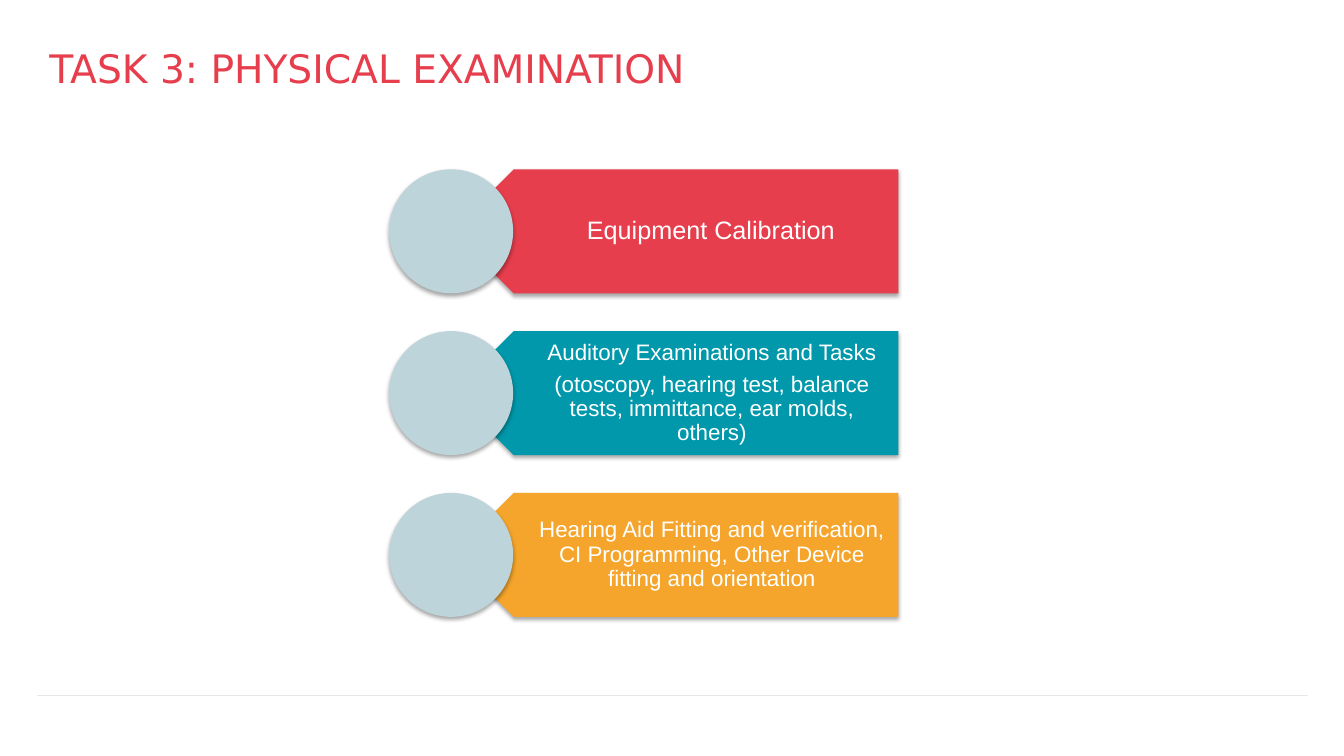
"""Builds the physical examination slide with three labelled banners."""
import pptx
import pptx.util
import pptx.dml.color
import pptx.enum.shapes
import pptx.enum.text
import pptx.oxml

Inches = pptx.util.Inches
Pt = pptx.util.Pt
RGBColor = pptx.dml.color.RGBColor
Shape = pptx.enum.shapes.MSO_SHAPE
Anchor = pptx.enum.text.MSO_ANCHOR
Align = pptx.enum.text.PP_ALIGN

RED = RGBColor(0xE6, 0x3E, 0x4D)
TEAL = RGBColor(0x00, 0x98, 0xAA)
AMBER = RGBColor(0xF5, 0xA5, 0x2B)
PALE = RGBColor(0xBD, 0xD4, 0xDA)
WHITE = RGBColor(0xFF, 0xFF, 0xFF)
DARK = RGBColor(0x26, 0x26, 0x26)

NS = 'xmlns:a="http://schemas.openxmlformats.org/drawingml/2006/main"'
SHADOW = (
    f'<a:outerShdw {NS} blurRad="39370" dist="22860" dir="5400000" rotWithShape="0">'
    '<a:srgbClr val="000000"><a:alpha val="35000"/></a:srgbClr></a:outerShdw>'
)


def add_form(kind, left, top, width, height, color):
    form = slide.shapes.add_shape(kind, Inches(left), Inches(top), Inches(width), Inches(height))
    form.fill.solid()
    form.fill.fore_color.rgb = color
    form.line.fill.background()
    form.shadow.inherit = False
    effects = form._element.spPr.find(pptx.oxml.ns.qn("a:effectLst"))
    effects.append(pptx.oxml.parse_xml(SHADOW))
    return form


def add_run(para, text, font, size, color):
    run = para.add_run()
    run.text = text
    run.font.name = font
    run.font.size = Pt(size)
    run.font.color.rgb = color


deck = pptx.Presentation()
deck.slide_width = Inches(13.33)
deck.slide_height = Inches(7.5)
slide = deck.slides.add_slide(deck.slide_layouts[5])

rule = slide.shapes.add_connector(
    pptx.enum.shapes.MSO_CONNECTOR.STRAIGHT, Inches(0.37), Inches(6.9), Inches(12.97), Inches(6.9)
)
rule.line.color.rgb = DARK
rule.line.width = Pt(0.25)
tint = rule.line._ln.find(".//" + pptx.oxml.ns.qn("a:srgbClr"))
tint.append(pptx.oxml.parse_xml(f'<a:alpha {NS} val="31000"/>'))
rule._element.spPr.append(pptx.oxml.parse_xml(f"<a:effectLst {NS}/>"))

title = slide.shapes.title
title.left, title.top = Inches(0.39), Inches(0.3)
title.width, title.height = Inches(12.49), Inches(0.71)
frame = title.text_frame
frame.word_wrap = True
frame.auto_size = pptx.enum.text.MSO_AUTO_SIZE.NONE
frame.vertical_anchor = Anchor.BOTTOM
frame.margin_left = frame.margin_right = Inches(0.1)
frame.margin_top = frame.margin_bottom = Inches(0.1)
frame.paragraphs[0].alignment = Align.LEFT
add_run(frame.paragraphs[0], "TASK 3: PHYSICAL EXAMINATION", "DejaVu Sans", 28, RED)

TOP, STEP, SIDE = 1.68, 1.605, 1.23
tasks = [
    (RED, 18, 0.14, ["Equipment Calibration"]),
    (TEAL, 16, 0.12, [
        "Auditory Examinations and Tasks",
        "(otoscopy, hearing test, balance tests, immittance, ear molds, others)",
    ]),
    (AMBER, 16, 0.12, [
        "Hearing Aid Fitting and verification, CI Programming, Other Device fitting and orientation",
    ]),
]

for index, (color, size, inset, lines) in enumerate(tasks):
    top = TOP + index * STEP
    banner = add_form(Shape.PENTAGON, 4.48, top, 4.43, SIDE, color)
    banner.rotation = 180
    banner.adjustments[0] = 0.5

    label = slide.shapes.add_textbox(Inches(4.79), Inches(top), Inches(4.12), Inches(SIDE))
    frame = label.text_frame
    frame.word_wrap = True
    frame.vertical_anchor = Anchor.MIDDLE
    frame.margin_left, frame.margin_right = Inches(0.54), Inches(inset)
    frame.margin_top = frame.margin_bottom = Inches(0.07)
    for order, line in enumerate(lines):
        para = frame.add_paragraph() if order else frame.paragraphs[0]
        para.alignment = Align.CENTER
        para.line_spacing = 0.9
        para.space_after = Pt(size * 0.35)
        add_run(para, line, "Arial", size, WHITE)

    add_form(Shape.OVAL, 3.86, top, SIDE, SIDE, PALE)

deck.save("out.pptx")
